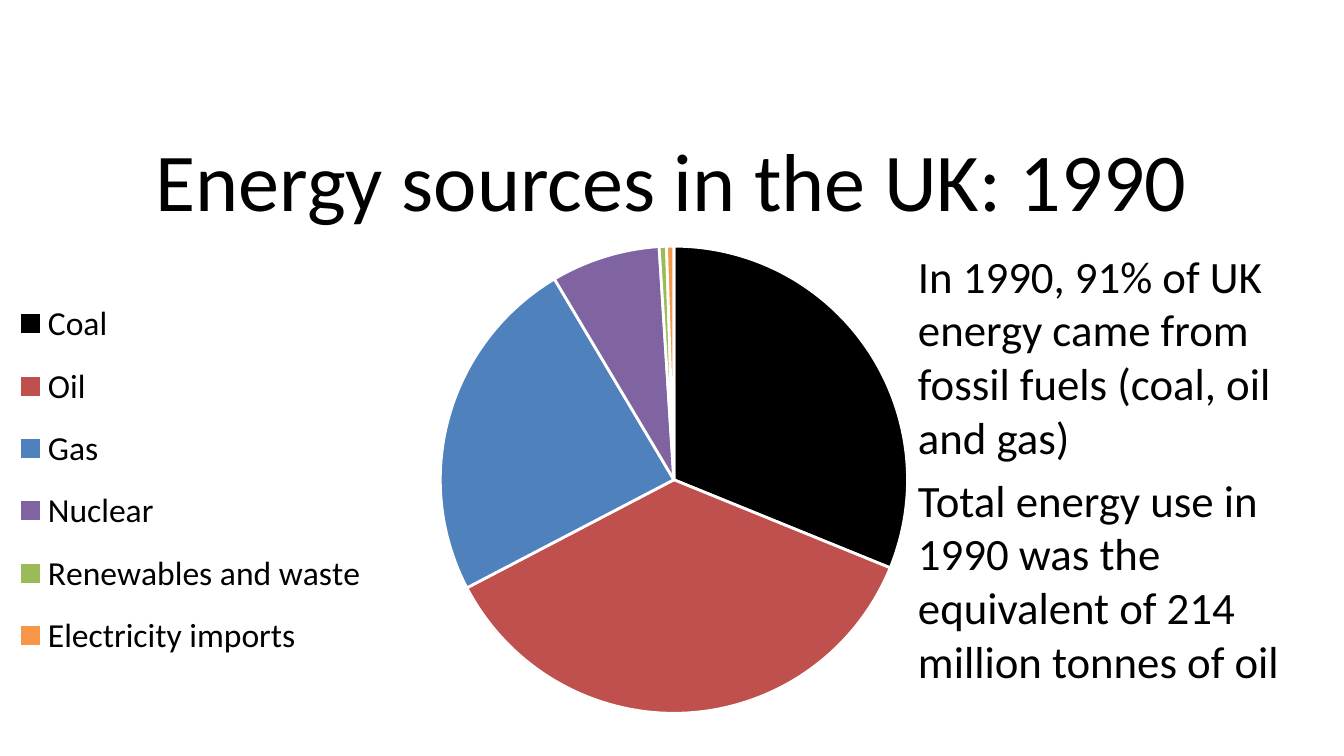
from dataclasses import dataclass

from lxml import etree
from pptx import Presentation
from pptx.chart.data import CategoryChartData
from pptx.dml.color import RGBColor
from pptx.enum.chart import XL_CHART_TYPE, XL_LEGEND_POSITION
from pptx.enum.text import MSO_ANCHOR, MSO_AUTO_SIZE, PP_ALIGN
from pptx.oxml import parse_xml
from pptx.oxml.ns import nsdecls, qn
from pptx.util import Cm, Pt

PIE = XL_CHART_TYPE.PIE
LEFT_LEGEND = XL_LEGEND_POSITION.LEFT
MIDDLE, TOP = MSO_ANCHOR.MIDDLE, MSO_ANCHOR.TOP
CENTER, LEFT = PP_ALIGN.CENTER, PP_ALIGN.LEFT
NO_FIT = MSO_AUTO_SIZE.NONE
TITLE_ONLY = 5


@dataclass(frozen=True)
class Theme:
    font: str = "Calibri"
    text: RGBColor = RGBColor(0, 0, 0)
    edge: RGBColor = RGBColor(255, 255, 255)
    title_size: int = 44
    body_size: int = 24
    legend_size: int = 18
    chart_size: int = 10
    para_gap: float = 4.8


THEME = Theme()

SOURCES = [
    ("Coal", 31, "000000"),
    ("Oil", 36, "C0504D"),
    ("Gas", 24, "4F81BD"),
    ("Nuclear", 7.5, "8064A2"),
    ("Renewables and waste", 0.5, "9BBB59"),
    ("Electricity imports", 0.5, "F79646"),
]
FACTS = [
    "In 1990, 91% of UK energy came from fossil fuels (coal, oil and gas)",
    "Total energy use in 1990 was the equivalent of 214 million tonnes of oil",
]


def style_font(font, size):
    formats = {"name": THEME.font, "size": Pt(size)}
    for key, value in formats.items():
        setattr(font, key, value)
    font.color.rgb = THEME.text


def fill_text(tf, paragraphs, size, align, anchor):
    formats = {"word_wrap": True, "auto_size": NO_FIT, "vertical_anchor": anchor}
    for key, value in formats.items():
        setattr(tf, key, value)
    for i, text in enumerate(paragraphs):
        p = tf.add_paragraph() if i else tf.paragraphs[0]
        p.alignment = align
        p.space_before = Pt(THEME.para_gap if i else 0)
        r = p.add_run()
        r.text = text
        style_font(r.font, size)


def add_title(s, box, text):
    sp = s.shapes.title
    for key, value in zip(("left", "top", "width", "height"), box):
        setattr(sp, key, Cm(value))
    fill_text(sp.text_frame, [text], THEME.title_size, CENTER, MIDDLE)


def add_facts(s, box):
    sp = s.shapes.add_textbox(*map(Cm, box))
    fill_text(sp.text_frame, FACTS, THEME.body_size, LEFT, TOP)


def set_layout(element, after, box, inner=False):
    for old in element.findall(qn("c:layout")):
        element.remove(old)
    layout = parse_xml(f"<c:layout {nsdecls('c')}/>")
    manual = etree.SubElement(layout, qn("c:manualLayout"))
    values = {"layoutTarget": "inner"} if inner else {}
    values |= {"xMode": "edge", "yMode": "edge"}
    values |= dict(zip("xywh", box))
    for tag, value in values.items():
        etree.SubElement(manual, qn(f"c:{tag}")).set("val", str(value))
    if after is None:
        element.insert(0, layout)
    else:
        after.addnext(layout)


def add_pie(s, box):
    data = CategoryChartData()
    data.categories = [name for name, _, _ in SOURCES]
    data.add_series("Series 1", [value for _, value, _ in SOURCES])
    chart = s.shapes.add_chart(PIE, *map(Cm, box), data).chart
    chart.has_title = False
    style_font(chart.font, THEME.chart_size)

    plot = chart.plots[0]
    plot.vary_by_categories = True
    for i, (_, _, color) in enumerate(SOURCES):
        fmt = plot.series[0].points[i].format
        fmt.fill.solid()
        fmt.fill.fore_color.rgb = RGBColor.from_string(color)
        fmt.line.color.rgb = THEME.edge
        fmt.line.width = Pt(1.5)

    chart.has_legend = True
    legend = chart.legend
    legend.position = LEFT_LEGEND
    legend.include_in_layout = False
    style_font(legend.font, THEME.legend_size)

    area = chart.element.find(".//" + qn("c:plotArea"))
    key = chart.element.find(".//" + qn("c:legend"))
    set_layout(area, None, (0.45, 0.04, 0.48, 0.92), inner=True)
    set_layout(key, key.find(qn("c:legendPos")), (0.01, 0.11, 0.37, 0.78))


def main():
    prs = Presentation()
    prs.slide_width, prs.slide_height = Cm(25.4), Cm(14.29)
    s = prs.slides.add_slide(prs.slide_layouts[TITLE_ONLY])
    add_facts(s, (17.1, 4.57, 7.4, 8.58))
    add_title(s, (0.5, 2.18, 24.4, 2.4), "Energy sources in the UK: 1990")
    add_pie(s, (0, 4.27, 18.46, 9.6))
    prs.save("out.pptx")


if __name__ == "__main__":
    main()
